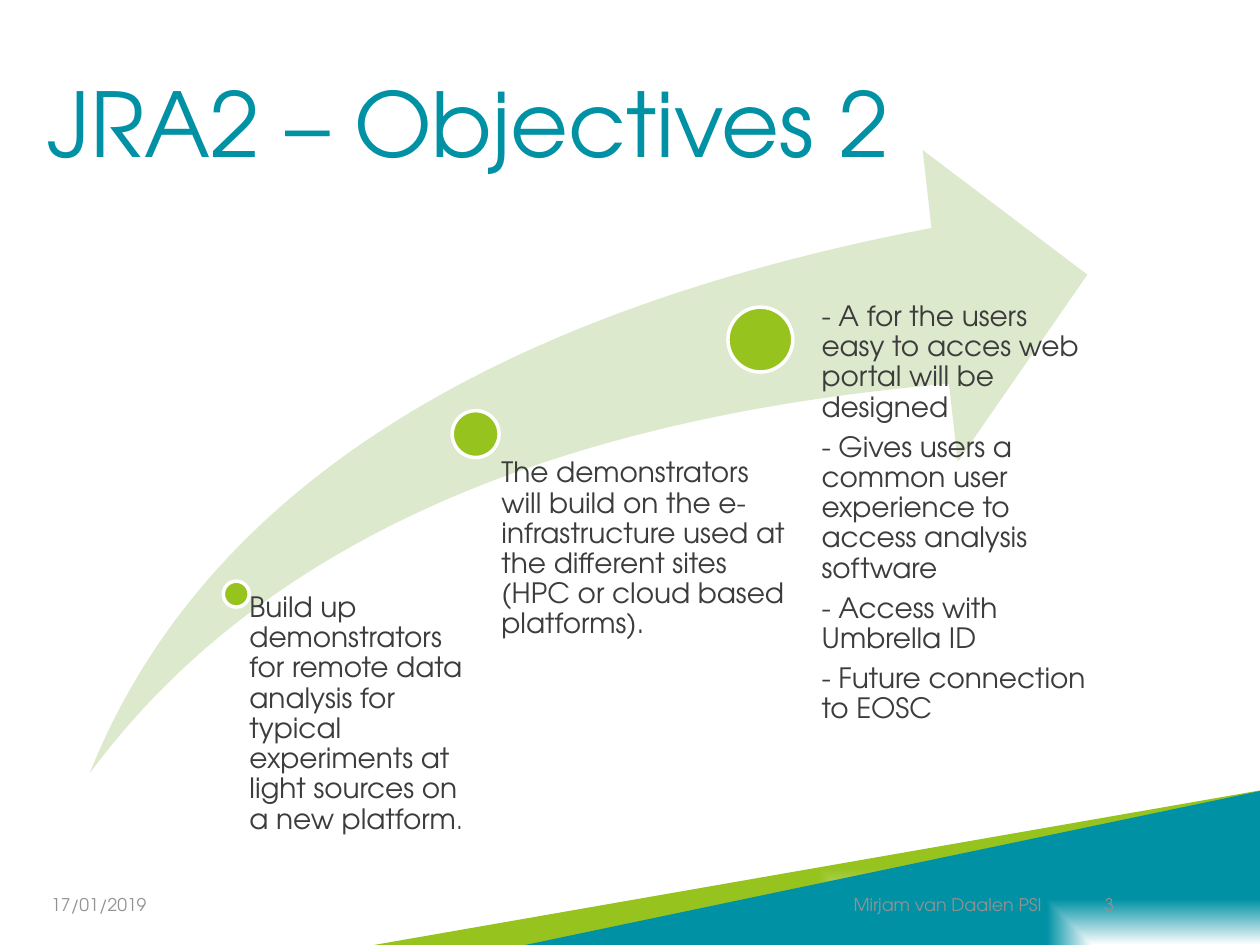
from dataclasses import dataclass
from lxml import etree
from pptx import Presentation
from pptx.dml.color import RGBColor as Rgb
from pptx.enum.shapes import MSO_SHAPE as Shp
from pptx.enum.text import MSO_ANCHOR as Anc, PP_ALIGN as Al
from pptx.oxml import parse_xml
from pptx.util import Inches, Pt


@dataclass(frozen=True)
class Theme:
    font: str = "TeX Gyre Adventor"
    teal: str = "0091A5"
    green: str = "96C31E"
    pale: str = "DDE9CD"
    white: str = "FFFFFF"
    ink: str = "3C3C3C"
    grey: str = "929292"
    head: float = 51
    body: float = 16
    dot: float = 14
    foot: float = 10


T = Theme()
NS = "http://schemas.openxmlformats.org/drawingml/2006/main"

STEPS = [
    ((1.875, 4.715), 0.026, (1.87, 4.71, 1.85, 1.43), 0.11, [
        "Build up demonstrators for remote data analysis for typical "
        "experiments at light sources on a new platform"], "."),
    ((3.775, 3.445), 0.047, (3.78, 3.64, 2.52, 1.52), 0.2, [
        "The demonstrators will build on the e-infrastructure used at "
        "the different sites (HPC or cloud based platforms)."], ""),
    ((6.035, 2.695), 0.065, (6.25, 2.4, 2.42, 1.48), 0.27, [
        "- A for the users easy to acces web portal will be designed",
        "- Gives users a common user experience to access analysis software",
        "- Access with Umbrella ID",
        "- Future connection to EOSC"], ""),
]


def add_run(para, text, size, color):
    run = para.add_run()
    run.text = text
    look = {"name": T.font, "size": Pt(size)}
    for key, val in look.items():
        setattr(run.font, key, val)
    run.font.color.rgb = Rgb.from_string(color)


def add_text(slide, box, lines, size, color, form=None, frame=None):
    text = slide.shapes.add_textbox(*map(Inches, box)).text_frame
    text.word_wrap = True
    for key, val in (frame or {}).items():
        setattr(text, key, val)
    for i, line in enumerate(lines):
        para = text.add_paragraph() if i else text.paragraphs[0]
        for key, val in (form or {}).items():
            setattr(para, key, val)
        add_run(para, line, size, color)
    return text


def add_form(slide, kind, box, color):
    shape = slide.shapes.add_shape(kind, *map(Inches, box))
    shape.shadow.inherit = False
    shape.fill.solid()
    shape.fill.fore_color.rgb = Rgb.from_string(color)
    shape.line.fill.background()
    return shape


def add_wedge(slide, box, color, stop):
    shape = add_form(slide, Shp.RIGHT_TRIANGLE, box, color)
    props = shape.fill._xPr
    props.find(f"{{{NS}}}xfrm").set("flipH", "1")
    stops = [(0, T.white), (stop, color), (100, color)]
    marks = "".join(f'<a:gs pos="{pos * 1000}"><a:srgbClr val="{tone}"/></a:gs>'
                    for pos, tone in stops)
    grad = parse_xml(f'<a:gradFill xmlns:a="{NS}" rotWithShape="1">'
                     f'<a:gsLst>{marks}</a:gsLst><a:path path="rect">'
                     '<a:fillToRect l="100000" t="100000"/></a:path></a:gradFill>')
    props.replace(props.find(f"{{{NS}}}solidFill"), grad)


def add_base(slide, box):
    left, top, wide, high = box
    add_wedge(slide, box, T.green, 100)
    add_wedge(slide, (left + 1.2, top, wide - 1.18, high), T.teal, 59)


def add_title(slide, box):
    add_text(slide, box, ["JRA2 – Objectives 2"], T.head, T.teal,
             {"line_spacing": 1.1}, {"vertical_anchor": Anc.MIDDLE})


def add_step(slide, box, step):
    left, top, wide, high = box
    (mid_x, mid_y), scale, area, inset, lines, tail = step
    size = wide * scale
    spot = (left + mid_x - size / 2, top + mid_y - size / 2, size, size)
    dot = add_form(slide, Shp.OVAL, spot, T.green)
    dot.line.color.rgb = Rgb.from_string(T.white)
    dot.line.width = Pt(2)
    x, y, w, h = area
    form = {"line_spacing": 0.9, "space_after": Pt(T.body * 0.35)}
    frame = {"margin_left": Inches(inset), "margin_top": 0,
             "margin_right": 0, "margin_bottom": 0}
    text = add_text(slide, (left + x, top + y, w, h), lines,
                    T.body, T.ink, form, frame)
    if tail:
        add_run(text.paragraphs[-1], tail, T.dot, T.ink)


def add_path(slide, box):
    left, top, wide, high = box
    arrow = add_form(slide, Shp.SWOOSH_ARROW, box, T.pale)
    for i in range(2):
        arrow.adjustments[i] = 0.25
    for (mid_x, mid_y), scale, (x, y, w, h), *rest in STEPS:
        step = ((mid_x - left, mid_y - top), scale,
                (x - left, y - top, w, h), *rest)
        add_step(slide, box, step)


def add_foot(slide, box):
    left, top, wide, high = box
    parts = [(0, 1.26, Al.RIGHT, "17/01/2019"),
             (5.04, 4.96, Al.CENTER, "Mirjam van Daalen PSI"),
             (8.31, 0.63, Al.RIGHT, "3")]
    for x, w, side, line in parts:
        add_text(slide, (left + x, top, w, high), [line], T.foot, T.grey,
                 {"alignment": side}, {"vertical_anchor": Anc.MIDDLE})


def main():
    deck = Presentation()
    deck.slide_width, deck.slide_height = Inches(10), Inches(7.5)
    slide = deck.slides.add_slide(deck.slide_layouts[6])
    add_base(slide, (2.97, 6.27, 7.05, 1.23))
    add_title(slide, (0.28, 0.3, 9.45, 1.25))
    add_path(slide, (0.71, 1.19, 7.92, 4.95))
    add_foot(slide, (0, 6.98, 10, 0.4))
    deck.save("out.pptx")


if __name__ == "__main__":
    main()
